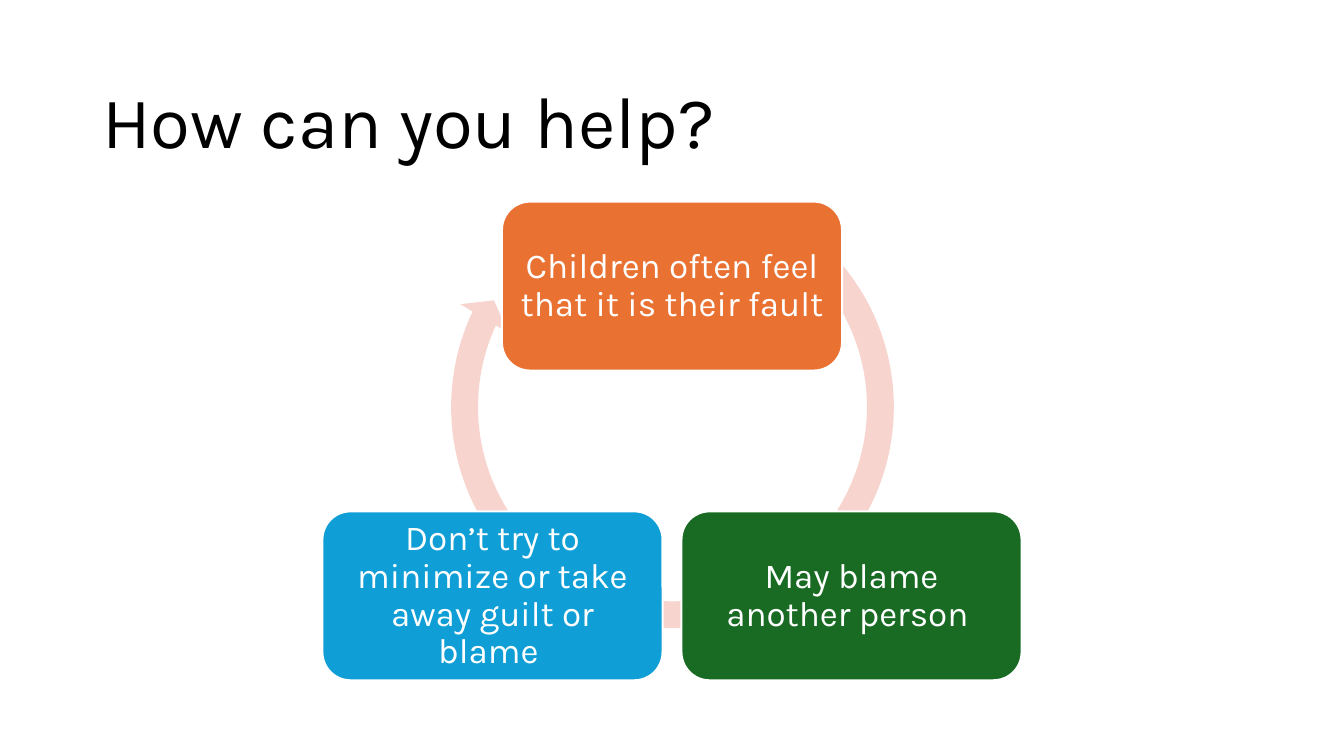
from dataclasses import dataclass

from pptx import Presentation
from pptx.dml.color import RGBColor as Rgb
from pptx.enum.shapes import MSO_SHAPE as Kind
from pptx.enum.text import MSO_ANCHOR as Anchor, PP_ALIGN as Align
from pptx.shapes.autoshape import Shape
from pptx.slide import Slide
from pptx.util import Emu, Pt

WIDE, HIGH = 1280, 720


@dataclass(frozen=True)
class Theme:
    font: str = "Karla"
    black: str = "000000"
    white: str = "FFFFFF"
    ring: str = "F7D5CE"
    orange: str = "E97132"
    green: str = "196B24"
    blue: str = "0F9ED5"
    title: int = 52
    body: int = 25
    edge: float = 1.5


@dataclass(frozen=True)
class Box:
    left: int
    top: int
    width: int
    height: int


@dataclass(frozen=True)
class Card:
    text: str
    fill: str
    shift: int  # centre, measured from the middle of the slide
    top: int


THEME = Theme()
TITLE = Box(88, 59, 1104, 119)
RING = Box(416, 163, 449, 449)
TURNS = (0.057, 3.405, 123.09, 183.51, 0.059)
CARD_W, CARD_H, INSET = 324, 161, 10
CARDS = (
    Card("Children often feel that it is their fault ", THEME.orange, 0, 192),
    Card("May blame another person ", THEME.green, 171, 487),
    Card("Don’t try to minimize or take away guilt or blame ", THEME.blue, -171, 487),
)


def px(count: int) -> Emu:
    return Emu(count * 9525)


def place(box: Box) -> tuple[Emu, Emu, Emu, Emu]:
    return px(box.left), px(box.top), px(box.width), px(box.height)


def write(shape: Shape, text: str, size: int, color: str, align: Align, inset: dict[str, Emu]) -> None:
    frame = shape.text_frame
    para = frame.paragraphs[0]
    run = para.add_run()
    run.text = text
    formats = (
        (frame, {"word_wrap": True, "vertical_anchor": Anchor.MIDDLE, **inset}),
        (para, {"alignment": align, "line_spacing": 0.9}),
        (run.font, {"name": THEME.font, "size": Pt(size)}),
    )
    for target, values in formats:
        for name, value in values.items():
            setattr(target, name, value)
    run.font.color.rgb = Rgb.from_string(color)


def draw(slide: Slide, kind: Kind, box: Box, fill: str) -> Shape:
    shape = slide.shapes.add_shape(kind, *place(box))
    shape.shadow.inherit = False
    shape.fill.solid()
    shape.fill.fore_color.rgb = Rgb.from_string(fill)
    shape.line.fill.background()
    return shape


def add_card(slide: Slide, card: Card) -> None:
    left = (WIDE - CARD_W) // 2 + card.shift
    shape = draw(slide, Kind.ROUNDED_RECTANGLE, Box(left, card.top, CARD_W, CARD_H), card.fill)
    shape.line.color.rgb = Rgb.from_string(THEME.white)
    shape.line.width = Pt(THEME.edge)
    inset = {f"margin_{side}": px(INSET) for side in ("left", "top", "right", "bottom")}
    write(shape, card.text, THEME.body, THEME.white, Align.CENTER, inset)


def main() -> None:
    deck = Presentation()
    deck.slide_width, deck.slide_height = px(WIDE), px(HIGH)
    slide = deck.slides.add_slide(deck.slide_layouts[6])

    # Title
    title = slide.shapes.add_textbox(*place(TITLE))
    write(title, "How can you help?", THEME.title, THEME.black, Align.LEFT, {})

    # Cycle arrow behind the cards
    ring = draw(slide, Kind.CIRCULAR_ARROW, RING, THEME.ring)
    for index, turn in enumerate(TURNS):
        ring.adjustments[index] = turn

    # Cards
    for card in CARDS:
        add_card(slide, card)

    deck.save("out.pptx")


if __name__ == "__main__":
    main()
